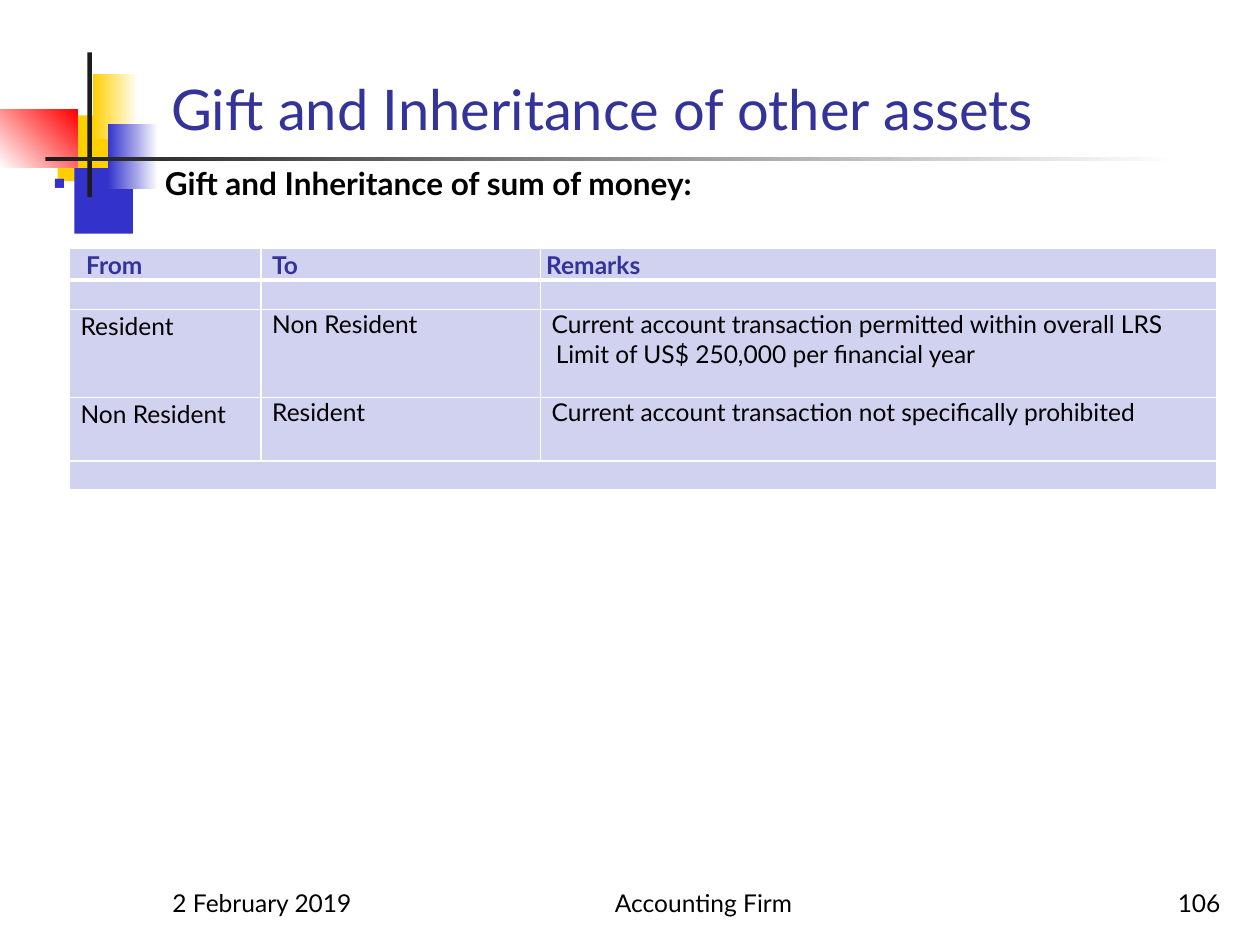
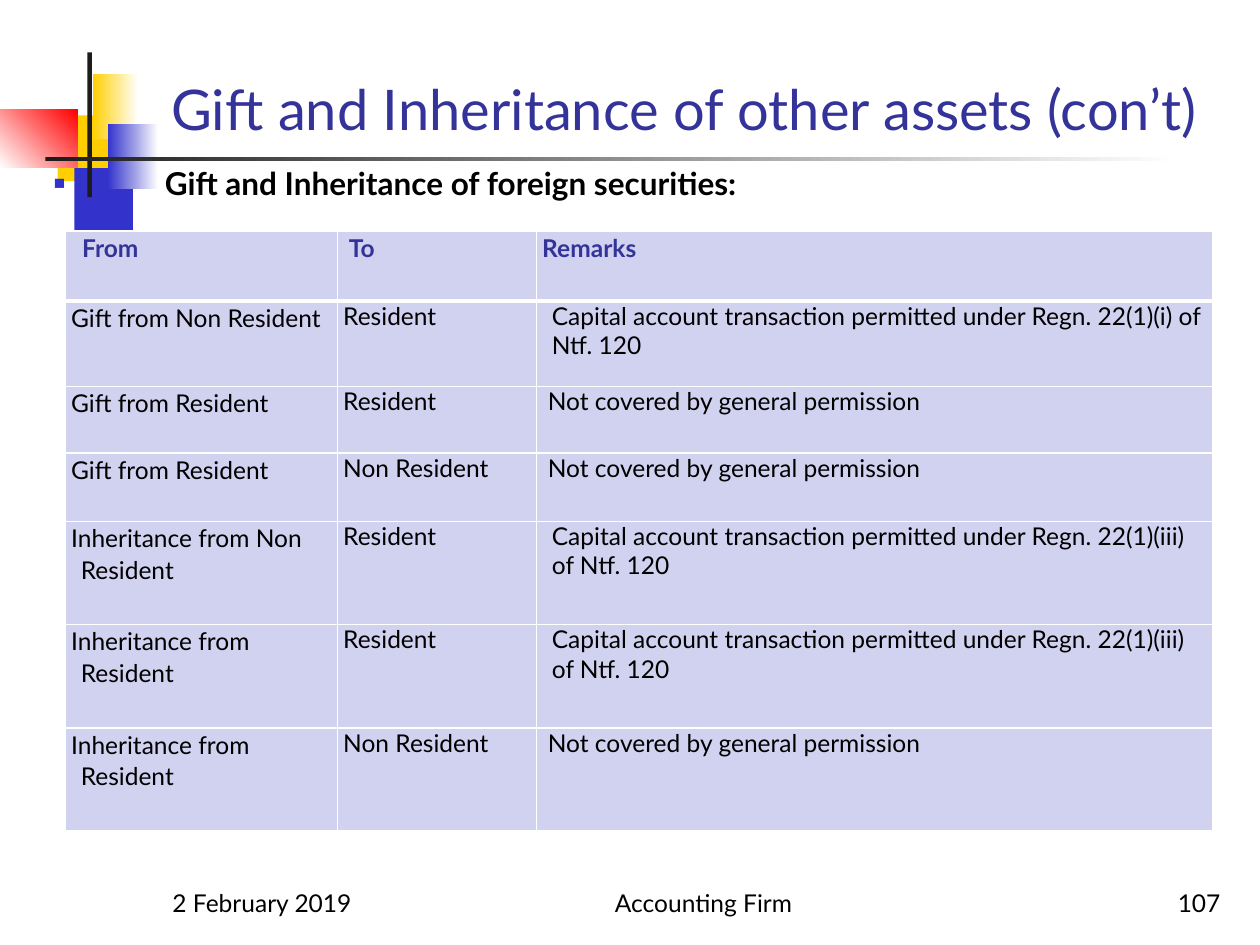
import lxml.etree
import pptx
import pptx.dml.color
import pptx.enum.shapes
import pptx.enum.text
import pptx.oxml.ns
import pptx.util

Pt = pptx.util.Pt
ALIGN = pptx.enum.text.PP_ALIGN
ANCHOR = pptx.enum.text.MSO_ANCHOR
qn = pptx.oxml.ns.qn

# Shared look
WHITE, BLACK, INK = "FFFFFF", "000000", "1C1C1C"
YELLOW, BLUE, RED = "FFCF01", "3333CC", "FF0000"
HEADING, CELL = "333399", "D1D1F0"
TITLE_FONT = {"name": "Lato", "size": Pt(32), "bold": False}
BODY_FONT = {"name": "Lato", "size": Pt(18), "bold": True}
SMALL_FONT = {"name": "Lato", "size": Pt(14), "bold": False}
HEADER_FONT = {**SMALL_FONT, "bold": True}
SPACE = 3.16  # width of one space at 14 pt
HANG = 8.64   # left edge of indented cell lines

# Left, top, width, height, colours (two make a gradient), angle
DECORATION = [
    (33, 66, 34.5, 37.5, [YELLOW], 0),
    (42.5, 96, 33.5, 37.5, [BLUE], 0),
    (53, 42, 26, 37.5, [YELLOW, WHITE], 0),
    (61.75, 70.75, 28.75, 37.5, [BLUE, WHITE], 0),
    (0, 62.5, 44.25, 33.25, [WHITE, RED], 45),
    (50, 30, 2.5, 82.75, [INK], 0),
    (26, 89.75, 648, 2.5, [INK, WHITE], 0),
]

# Left, width, text, alignment; None stands for the slide number
FOOTERS = [
    (91.5, 150, "2 February 2019", ALIGN.LEFT),
    (288, 228, "Accounting Firm", ALIGN.CENTER),
    (554.5, 150, None, ALIGN.RIGHT),
]


def color(value):
    return pptx.dml.color.RGBColor.from_string(value)


def apply_format(target, values):
    for name, value in values.items():
        setattr(target, name, value)


def write(paragraph, text, font, font_color, **layout):
    run = paragraph.add_run()
    run.text = text
    apply_format(run.font, font)
    run.font.color.rgb = color(font_color)
    apply_format(paragraph, layout)


def indent(paragraph, first, rest):
    properties = paragraph._p.get_or_add_pPr()
    properties.set("marL", str(Pt(rest)))
    properties.set("indent", str(Pt(first) - Pt(rest)))
    return properties


def add_block(slide, left, top, width, height, colors, angle):
    shape = slide.shapes.add_shape(pptx.enum.shapes.MSO_SHAPE.RECTANGLE,
                                   Pt(left), Pt(top), Pt(width), Pt(height))
    shape.shadow.inherit = False
    shape.line.fill.background()
    if len(colors) == 1:
        shape.fill.solid()
        shape.fill.fore_color.rgb = color(colors[0])
        return
    shape.fill.gradient()
    shape.fill.gradient_angle = angle
    for stop, value in zip(shape.fill.gradient_stops, colors):
        stop.color.rgb = color(value)


def add_text(slide, left, top, width, height, anchor):
    box = slide.shapes.add_textbox(Pt(left), Pt(top), Pt(width), Pt(height))
    apply_format(box.text_frame, {"word_wrap": True, "vertical_anchor": anchor})
    return box.text_frame.paragraphs[0]


def add_bullet(slide, text):
    paragraph = add_text(slide, 23.75, 90, 681, 414, ANCHOR.TOP)
    write(paragraph, text, BODY_FONT, BLACK, space_before=Pt(3.6))
    properties = indent(paragraph, 0, 63.36)
    bullet_color = lxml.etree.SubElement(properties, qn("a:buClr"))
    lxml.etree.SubElement(bullet_color, qn("a:srgbClr"), val=BLUE)
    lxml.etree.SubElement(properties, qn("a:buSzPct"), val="60000")
    lxml.etree.SubElement(properties, qn("a:buFont"), typeface="Arial")
    lxml.etree.SubElement(properties, qn("a:buChar"), char="■")


def set_borders(cell, top, bottom):
    properties = cell._tc.get_or_add_tcPr()
    widths = {"a:lnL": 1, "a:lnR": 1, "a:lnT": top, "a:lnB": bottom}
    for position, (tag, width) in enumerate(widths.items()):
        line = lxml.etree.Element(qn(tag), w=str(Pt(width)))
        fill = lxml.etree.SubElement(line, qn("a:solidFill"))
        lxml.etree.SubElement(fill, qn("a:srgbClr"), val=WHITE)
        properties.insert(position, line)


def fill_cell(cell, content, row, column):
    apply_format(cell, {"margin_left": 0, "margin_right": 0,
                        "margin_top": 0, "margin_bottom": 0})
    cell.fill.solid()
    cell.fill.fore_color.rgb = color(CELL)
    set_borders(cell, 3 if row == 1 else 1, 3 if row == 0 else 1)
    paragraph = cell.text_frame.paragraphs[0]
    if content is None:
        # Keeps an empty row as low as a line of cell text
        lxml.etree.SubElement(paragraph._p, qn("a:endParaRPr"), sz="1200")
        return
    text, first, rest = content
    header = row == 0
    write(paragraph, text, HEADER_FONT if header else SMALL_FONT,
          HEADING if header else BLACK,
          line_spacing=1.07 if header or column == 0 else 1.0)
    indent(paragraph, first, rest)


def add_table(slide, left, top, widths, heights, rows):
    frame = slide.shapes.add_table(len(rows), len(widths), Pt(left), Pt(top),
                                   Pt(sum(widths)), Pt(sum(heights)))
    table = frame.table
    apply_format(table, {"first_row": False, "horz_banding": False})
    for column, width in zip(table.columns, widths):
        column.width = Pt(width)
    for row, height in zip(table.rows, heights):
        row.height = Pt(height)
    for row_index, row in enumerate(rows):
        for column_index, content in enumerate(row):
            fill_cell(table.cell(row_index, column_index), content,
                      row_index, column_index)
    return table


def spaced(text, spaces, rest=0):
    """Cell text that starts a number of spaces in."""
    return text, spaces * SPACE, rest


def block(text):
    """Cell text with every line indented alike."""
    return text, HANG, HANG


HEADER = [spaced("From", 3), spaced("To", 2), spaced("Remarks", 1)]
EMPTY = [None] * 3


def add_base_slide(presentation, title, subtitle, number):
    slide = presentation.slides.add_slide(presentation.slide_layouts[6])
    for part in DECORATION:
        add_block(slide, *part)
    write(add_text(slide, 90.75, 10, 613.5, 74.25, ANCHOR.BOTTOM),
          title, TITLE_FONT, HEADING)
    add_bullet(slide, subtitle)
    for left, width, text, alignment in FOOTERS:
        write(add_text(slide, left, 491.75, width, 36, ANCHOR.BOTTOM),
              text or str(number), SMALL_FONT, BLACK, alignment=alignment)
    return slide


def add_money_slide(presentation):
    slide = add_base_slide(presentation, "Gift and Inheritance of other assets",
                           "Gift and Inheritance of sum of money:", 106)
    rows = [
        HEADER,
        EMPTY,
        [spaced("Resident", 2), spaced("Non Resident", 2),
         spaced("Current account transaction permitted within overall LRS "
                "Limit of US$ 250,000 per financial year", 2, HANG)],
        [spaced("Non Resident", 2), spaced("Resident", 2),
         spaced("Current account transaction not specifically prohibited", 2)],
        EMPTY,
    ]
    table = add_table(slide, 39.75, 142, [109.5, 159.75, 386.5],
                      [17.5, 17, 50.25, 36.25, 16.25], rows)
    table.cell(4, 0).merge(table.cell(4, 2))


def add_securities_slide(presentation):
    slide = add_base_slide(presentation,
                           "Gift and Inheritance of other assets (con’t)",
                           "Gift and Inheritance of foreign securities:", 107)
    permitted = "Capital account transaction permitted under Regn. 22(1)({}) of Ntf. 120"
    gift, inheritance = block(permitted.format("i")), block(permitted.format("iii"))
    not_covered = spaced("Not covered by general permission", 2)
    resident, non_resident = spaced("Resident", 1), spaced("Non Resident", 1)
    gift_resident = spaced("Gift from Resident", 1)
    heir_resident = spaced("Inheritance from Resident", 1, HANG)
    rows = [
        HEADER,
        [spaced("Gift from Non Resident", 1), resident, gift],
        [gift_resident, resident, not_covered],
        [gift_resident, non_resident, not_covered],
        [spaced("Inheritance from Non Resident", 1, HANG), resident, inheritance],
        [heir_resident, resident, inheritance],
        [heir_resident, non_resident, not_covered],
    ]
    add_table(slide, 37.5, 132, [155.5, 113.75, 386.5],
              [40, 49, 38, 39] + [59] * 3, rows)


def main():
    presentation = pptx.Presentation()
    apply_format(presentation, {"slide_width": Pt(720), "slide_height": Pt(540)})
    add_money_slide(presentation)
    add_securities_slide(presentation)
    presentation.save("out.pptx")


if __name__ == "__main__":
    main()
